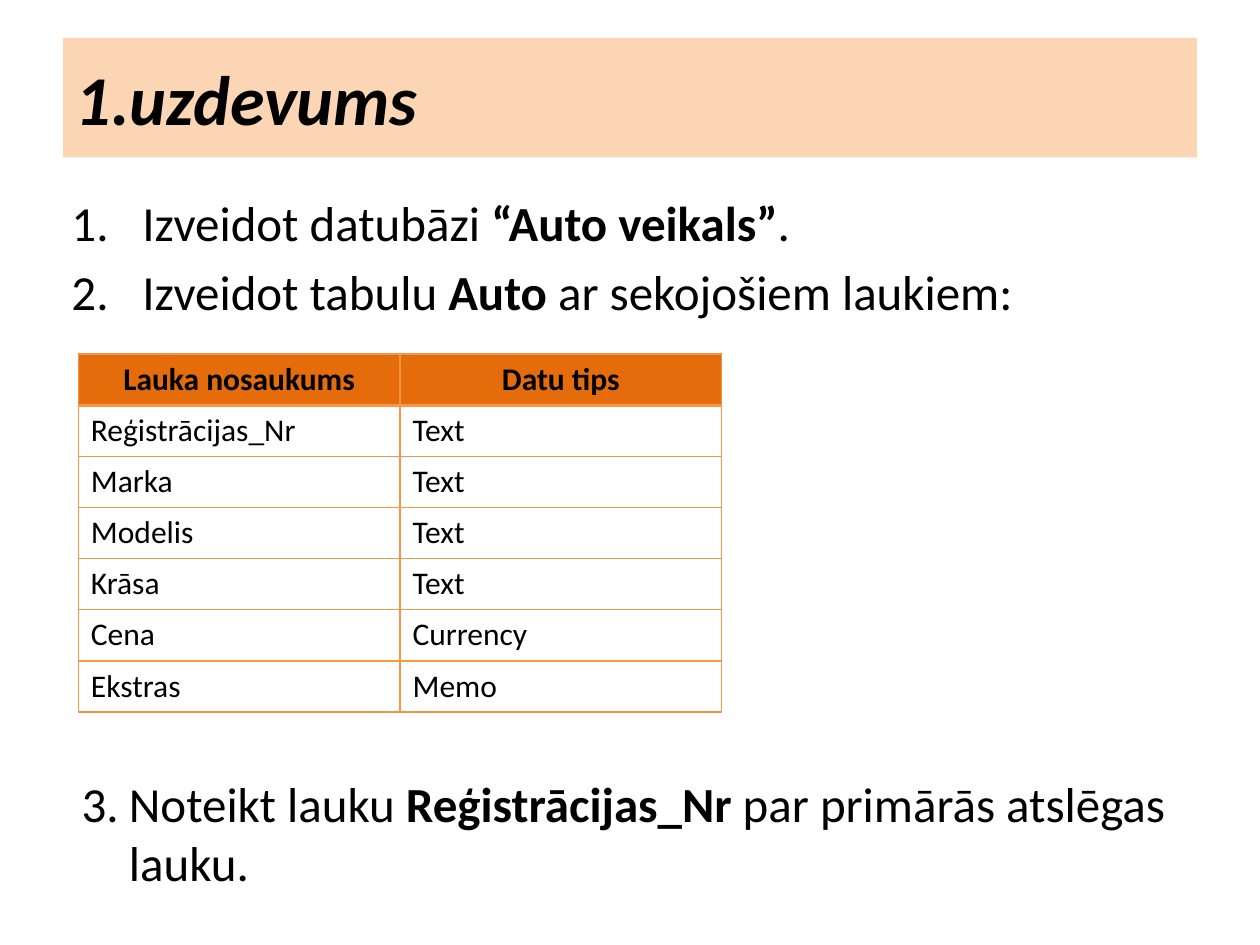
import pptx
import pptx.util
import pptx.dml.color
import pptx.enum.text
import pptx.oxml
import pptx.oxml.ns
from lxml import etree

Pt = pptx.util.Pt
ALIGN = pptx.enum.text.PP_ALIGN
ANCHOR = pptx.enum.text.MSO_ANCHOR
FONT = "Calibri"
COLORS = {"text": "000000", "banner": "FCD5B5", "header": "E46C0A", "border": "F79646"}

TASKS = [
    [("Izveidot datubāzi ", False), ("“Auto veikals”", True), (".", False)],
    [("Izveidot tabulu ", False), ("Auto ", True), ("ar sekojošiem laukiem:", False)],
]
KEY_TASK = [[("Noteikt lauku ", False), ("Reģistrācijas_Nr", True),
             (" par primārās atslēgas lauku.", False)]]
FIELDS = [
    ("Lauka nosaukums", "Datu tips"),
    ("Reģistrācijas_Nr", "Text"),
    ("Marka", "Text"),
    ("Modelis", "Text"),
    ("Krāsa", "Text"),
    ("Cena", "Currency"),
    ("Ekstras", "Memo"),
]


def color(name):
    return pptx.dml.color.RGBColor.from_string(COLORS[name])


def add_span(para, text, size=28, bold=False, italic=False):
    span = para.add_run()
    span.text = text
    span.font.name = FONT
    span.font.size = Pt(size)
    span.font.bold = bold
    span.font.italic = italic
    span.font.color.rgb = color("text")


def add_title(page, box, text):
    title = page.shapes.title
    title.left, title.top, title.width, title.height = map(Pt, box)
    title.fill.solid()
    title.fill.fore_color.rgb = color("banner")
    title.text_frame.vertical_anchor = ANCHOR.MIDDLE
    para = title.text_frame.paragraphs[0]
    para.alignment = ALIGN.LEFT
    add_span(para, text, size=40, bold=True, italic=True)


def add_numbered_list(page, box, items, indent, start=1, space=0):
    frame = page.shapes.add_textbox(*map(Pt, box)).text_frame
    frame.word_wrap = True
    for index, item in enumerate(items):
        para = frame.add_paragraph() if index else frame.paragraphs[0]
        para.space_before = Pt(space)
        # Hanging indent and automatic number
        props = para._p.get_or_add_pPr()
        props.set("marL", str(Pt(indent)))
        props.set("indent", str(-Pt(indent)))
        etree.SubElement(props, pptx.oxml.ns.qn("a:buFont"), typeface="+mj-lt")
        number = etree.SubElement(props, pptx.oxml.ns.qn("a:buAutoNum"), type="arabicPeriod")
        if start > 1:
            number.set("startAt", str(start))
        for text, bold in item:
            add_span(para, text, bold=bold)


def set_borders(cell, **widths):
    for side, width in widths.items():
        cell._tc.get_or_add_tcPr().append(pptx.oxml.parse_xml(
            f'<a:ln{side} {pptx.oxml.ns.nsdecls("a")} w="{Pt(width)}"><a:solidFill>'
            f'<a:srgbClr val="{COLORS["border"]}"/></a:solidFill></a:ln{side}>'))


def add_field_table(page, box, rows):
    table = page.shapes.add_table(len(rows), len(rows[0]), *map(Pt, box)).table
    table.horz_banding = False
    for row, values in enumerate(rows):
        header = row == 0
        table.rows[row].height = Pt(box[3] / len(rows))
        for column, text in enumerate(values):
            cell = table.cell(row, column)
            # The rule under the header is twice as thick
            set_borders(cell, L=1, R=1, T=2 if row == 1 else 1, B=2 if header else 1)
            if header:
                cell.fill.solid()
                cell.fill.fore_color.rgb = color("header")
            else:
                cell.fill.background()
            para = cell.text_frame.paragraphs[0]
            para.alignment = ALIGN.CENTER if header else ALIGN.LEFT
            add_span(para, text, size=18, bold=header)


def main():
    deck = pptx.Presentation()
    deck.slide_width, deck.slide_height = Pt(720), Pt(540)
    page = deck.slides.add_slide(deck.slide_layouts[5])

    add_title(page, (36, 21.6, 648, 68.4), "1.uzdevums")
    add_numbered_list(page, (33.8, 106.6, 648, 98.6), TASKS, indent=40.5, space=5.6)
    add_field_table(page, (44.8, 202.4, 367.6, 204.4), FIELDS)
    add_numbered_list(page, (39.6, 438.5, 635.8, 75), KEY_TASK, indent=27, start=3)

    deck.save("out.pptx")


if __name__ == "__main__":
    main()
